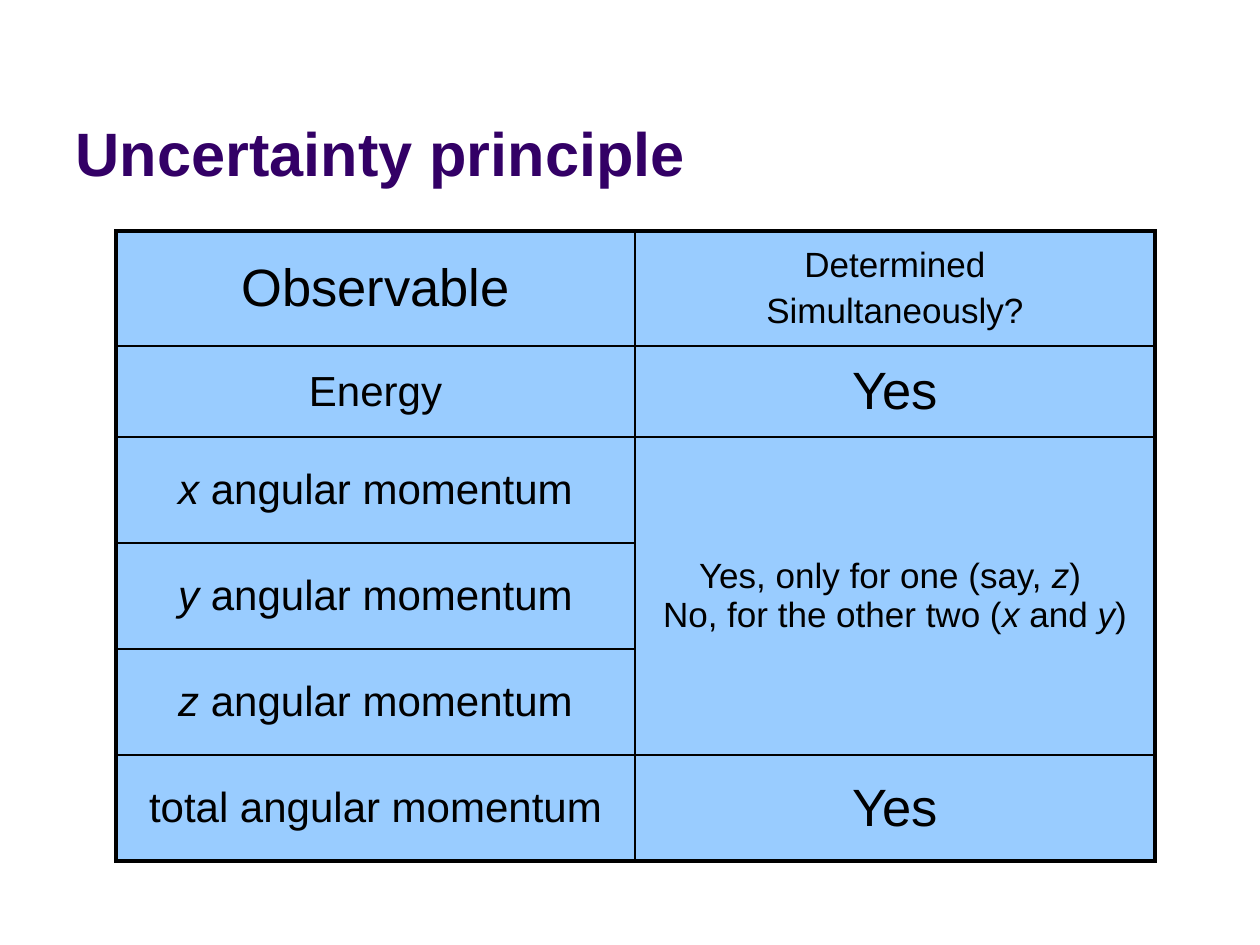
from dataclasses import dataclass

from lxml import etree
from pptx import Presentation, util as u
from pptx.dml import color
from pptx.enum import text
from pptx.oxml import ns

EMU_PER_PX = 914400 / 126
FONT = "Arial"
COLORS = {"title": "330066", "ink": "000000", "cell": "99CCFF"}
THIN, THICK = 1, 2.25
LEFT_COLUMN_WIDTH, RIGHT_COLUMN_WIDTH = 519, 520
ROW_HEIGHTS = [115, 91, 106, 106, 106, 106]


@dataclass(frozen=True)
class Run:
    text: str
    italic: bool = False


@dataclass(frozen=True)
class CellText:
    row: int
    column: int
    size: int
    paragraphs: list[list[Run]]


def px(length: int) -> u.Emu:
    return u.Emu(round(length * EMU_PER_PX))


def rgb(name: str) -> color.RGBColor:
    return color.RGBColor.from_string(COLORS[name])


def axis_momentum(row: int, axis: str) -> CellText:
    return CellText(row, 0, 24, [[Run(axis, True), Run(" angular momentum")]])


CELL_TEXTS = [
    CellText(0, 0, 30, [[Run("Observable")]]),
    CellText(0, 1, 20, [[Run("Determined")], [Run("Simultaneously?")]]),
    CellText(1, 0, 24, [[Run("Energy")]]),
    CellText(1, 1, 30, [[Run("Yes")]]),
    *(axis_momentum(row, axis) for row, axis in enumerate("xyz", start=2)),
    CellText(2, 1, 20, [[
        Run("Yes, only for one (say, "), Run("z", True), Run(") "),
        Run("\n"),
        Run("No, for the other two ("), Run("x ", True), Run("and "),
        Run("y", True), Run(")"),
    ]]),
    CellText(5, 0, 24, [[Run("total angular momentum")]]),
    CellText(5, 1, 30, [[Run("Yes")]]),
]


def style_font(font, size: int, color_name: str) -> None:
    font.name = FONT
    font.size = u.Pt(size)
    font.color.rgb = rgb(color_name)


def add_title(slide, wording: str) -> None:
    title = slide.shapes.title
    title.left, title.top, title.width, title.height = map(px, (63, 16, 1134, 179))
    frame = title.text_frame
    frame.auto_size = text.MSO_AUTO_SIZE.NONE
    frame.vertical_anchor = text.MSO_ANCHOR.BOTTOM
    paragraph = frame.paragraphs[0]
    paragraph.alignment = text.PP_ALIGN.LEFT
    run = paragraph.add_run()
    run.text = wording
    run.font.bold = True
    style_font(run.font, 35, "title")


def set_borders(cell, widths: dict[str, float]) -> None:
    properties = cell._tc.get_or_add_tcPr()
    for index, (side, width) in enumerate(widths.items()):
        line = etree.Element(ns.qn(f"a:ln{side}"), w=str(u.Pt(width)))
        fill = etree.SubElement(line, ns.qn("a:solidFill"))
        etree.SubElement(fill, ns.qn("a:srgbClr"), val=COLORS["ink"])
        properties.insert(index, line)


def format_cell(table, row: int, column: int) -> None:
    cell = table.cell(row, column)
    cell.fill.solid()
    cell.fill.fore_color.rgb = rgb("cell")
    cell.vertical_anchor = text.MSO_ANCHOR.MIDDLE
    outer = {
        "L": column == 0,
        "R": column == len(table.columns) - 1,
        "T": row == 0,
        "B": row == len(table.rows) - 1,
    }
    sides = "LR" if cell.is_spanned else "LRTB"
    set_borders(cell, {side: THICK if outer[side] else THIN for side in sides})


def fill_cell(table, content: CellText) -> None:
    frame = table.cell(content.row, content.column).text_frame
    for index, runs in enumerate(content.paragraphs):
        paragraph = frame.add_paragraph() if index else frame.paragraphs[0]
        paragraph.alignment = text.PP_ALIGN.CENTER
        paragraph.space_before = u.Pt(content.size * 0.2)
        for part in runs:
            if part.text == "\n":
                paragraph.add_line_break()
                continue
            run = paragraph.add_run()
            run.text = part.text
            run.font.italic = part.italic
            style_font(run.font, content.size, "ink")


def add_observables_table(slide) -> None:
    column_widths = [LEFT_COLUMN_WIDTH, RIGHT_COLUMN_WIDTH]
    table = slide.shapes.add_table(
        len(ROW_HEIGHTS), len(column_widths),
        px(116), px(231), px(sum(column_widths)), px(sum(ROW_HEIGHTS)),
    ).table
    table.first_row = False
    table.horz_banding = False
    for column, width in zip(table.columns, column_widths):
        column.width = px(width)
    for row, height in zip(table.rows, ROW_HEIGHTS):
        row.height = px(height)
    table.cell(2, 1).merge(table.cell(4, 1))
    for row in range(len(ROW_HEIGHTS)):
        for column in range(len(column_widths)):
            format_cell(table, row, column)
    for content in CELL_TEXTS:
        fill_cell(table, content)


def main() -> None:
    presentation = Presentation()
    presentation.slide_width = px(1260)
    presentation.slide_height = px(945)
    slide = presentation.slides.add_slide(presentation.slide_layouts[5])
    add_title(slide, "Uncertainty principle")
    add_observables_table(slide)
    presentation.save("out.pptx")


if __name__ == "__main__":
    main()
